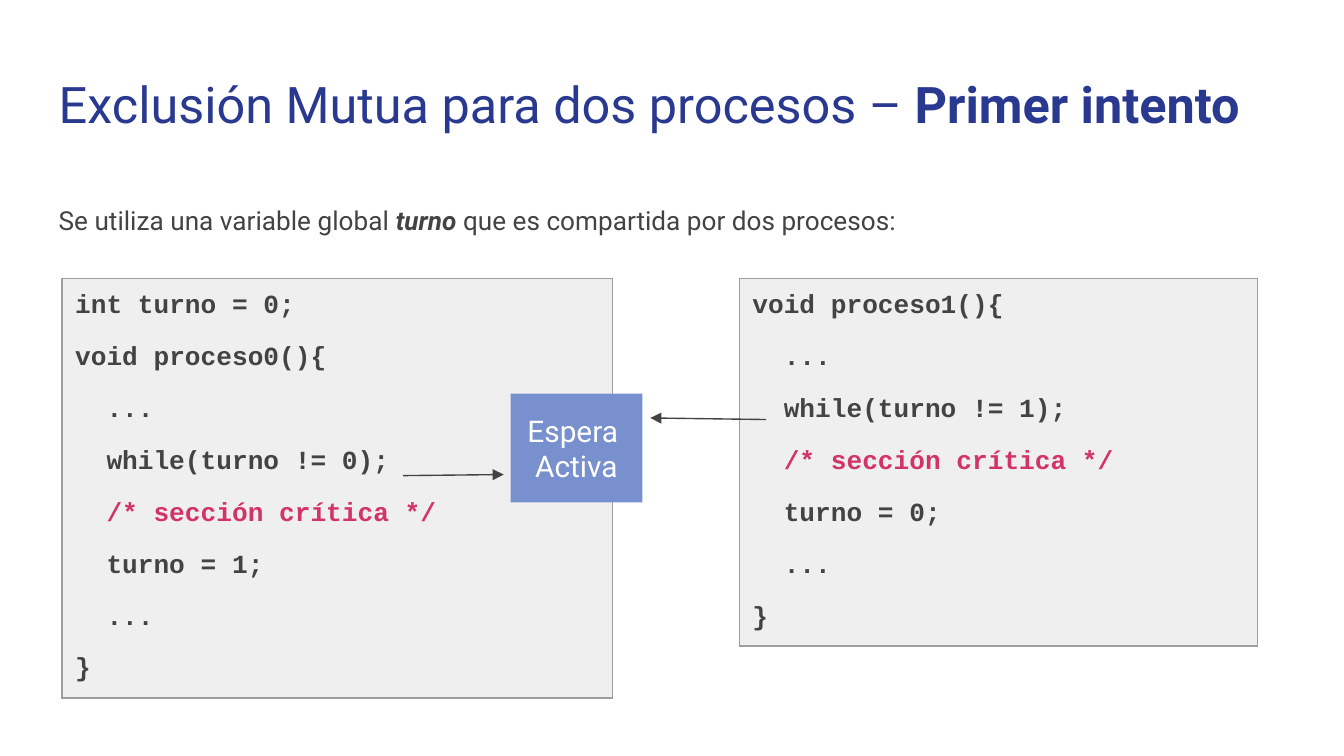
import dataclasses
import typing

import lxml.etree
import pptx
import pptx.dml.color
import pptx.enum.shapes
import pptx.enum.text
import pptx.oxml
import pptx.oxml.ns
import pptx.util

Cm = pptx.util.Cm
Pt = pptx.util.Pt
qn = pptx.oxml.ns.qn
Anchor = pptx.enum.text.MSO_ANCHOR
Align = pptx.enum.text.PP_ALIGN

COLORS = {
    "title": "2A3990",
    "text": "434343",
    "comment": "D23369",
    "code_fill": "EFEFEF",
    "code_border": "9E9E9E",
    "wait_fill": "7890CD",
    "wait_text": "FFFFFF",
}
MARGIN = Cm(0.25)
LINE_WIDTH = Pt(0.75)
CODE_TOP = 5.26
CODE_HEIGHT = 5.46
CODE_INDENT = Pt(16.8)

TITLE_FONT = {"name": "Roboto", "size": Pt(27), "bold": False}
BODY_FONT = {"name": "Roboto", "size": Pt(14)}
CODE_FONT = {"name": "Courier New", "size": Pt(14), "bold": True}
WAIT_FONT = {"name": "Roboto", "size": Pt(16)}


@dataclasses.dataclass
class CodeBlock:
    left: float
    width: float
    header: list[str]
    own_turn: int
    next_turn: int

    def lines(self) -> list[str]:
        return self.header + [
            "...",
            f"while(turno != {self.own_turn});",
            "/* sección crítica */",
            f"turno = {self.next_turn};",
            "...",
            "}",
        ]


@dataclasses.dataclass
class Arrow:
    start: tuple[float, float]
    end: tuple[float, float]


CODE_BLOCKS = [
    CodeBlock(1.17, 10.41, ["int turno = 0;", "void proceso0(){"], 0, 1),
    CodeBlock(13.97, 9.8, ["void proceso1(){"], 1, 0),
]
ARROWS = [
    Arrow((7.62, 8.99), (9.52, 8.97)),
    Arrow((14.48, 7.93), (12.29, 7.9)),
]


def rgb(color: str) -> pptx.dml.color.RGBColor:
    return pptx.dml.color.RGBColor.from_string(COLORS[color])


def set_all(target: typing.Any, values: dict[str, typing.Any]) -> None:
    for name, value in values.items():
        setattr(target, name, value)


def set_frame(frame: typing.Any, anchor: typing.Any) -> None:
    margins = {f"margin_{side}": MARGIN for side in ("left", "right", "top", "bottom")}
    set_all(frame, {
        **margins,
        "word_wrap": True,
        "auto_size": pptx.enum.text.MSO_AUTO_SIZE.NONE,
        "vertical_anchor": anchor,
    })


def add_run(paragraph: typing.Any, text: str, font: dict, color: str) -> None:
    run = paragraph.add_run()
    run.text = text
    set_all(run.font, font)
    run.font.color.rgb = rgb(color)


def add_title(slide: typing.Any) -> None:
    title = slide.shapes.title
    set_all(title, {"left": Cm(0.86), "top": Cm(1.14), "width": Cm(23.67), "height": Cm(1.68)})
    set_frame(title.text_frame, Anchor.TOP)
    paragraph = title.text_frame.paragraphs[0]
    paragraph.alignment = Align.LEFT
    add_run(paragraph, "Exclusión Mutua para dos procesos – ", TITLE_FONT, "title")
    add_run(paragraph, "Primer intento", {**TITLE_FONT, "bold": True}, "title")


def add_introduction(slide: typing.Any) -> None:
    introduction = slide.shapes.add_textbox(Cm(0.86), Cm(3.43), Cm(22.91), Cm(9.27))
    set_frame(introduction.text_frame, Anchor.TOP)
    paragraph = introduction.text_frame.paragraphs[0]
    paragraph.line_spacing = 1.3
    add_run(paragraph, "Se utiliza una variable global ", BODY_FONT, "text")
    add_run(paragraph, "turno ", {**BODY_FONT, "bold": True, "italic": True}, "text")
    add_run(paragraph, "que es compartida por dos procesos:", BODY_FONT, "text")


def add_borders(cell: typing.Any) -> None:
    properties = cell._tc.get_or_add_tcPr()
    for position, side in enumerate(("lnL", "lnR", "lnT", "lnB")):
        border = lxml.etree.Element(qn(f"a:{side}"), w=str(LINE_WIDTH))
        fill = lxml.etree.SubElement(border, qn("a:solidFill"))
        lxml.etree.SubElement(fill, qn("a:srgbClr"), val=COLORS["code_border"])
        properties.insert(position, border)


def add_code_block(slide: typing.Any, block: CodeBlock) -> None:
    table = slide.shapes.add_table(
        1, 1, Cm(block.left), Cm(CODE_TOP), Cm(block.width), Cm(CODE_HEIGHT)
    ).table
    set_all(table, {"first_row": False, "horz_banding": False})
    cell = table.cell(0, 0)
    cell.fill.solid()
    cell.fill.fore_color.rgb = rgb("code_fill")
    add_borders(cell)
    set_all(cell, {f"margin_{side}": MARGIN for side in ("left", "right", "top", "bottom")})
    cell.vertical_anchor = Anchor.MIDDLE

    lines = block.lines()
    for number, line in enumerate(lines):
        if number == 0:
            paragraph = cell.text_frame.paragraphs[0]
        else:
            paragraph = cell.text_frame.add_paragraph()
            paragraph.space_before = Pt(12)
        if len(block.header) <= number < len(lines) - 1:
            paragraph._p.get_or_add_pPr().set("marL", str(CODE_INDENT))
        add_run(paragraph, line, CODE_FONT, "comment" if line.startswith("/*") else "text")
    paragraph.space_after = Pt(12)


def add_arrow(slide: typing.Any, arrow: Arrow) -> None:
    connector = slide.shapes.add_connector(
        pptx.enum.shapes.MSO_CONNECTOR.STRAIGHT,
        *(Cm(value) for value in arrow.start + arrow.end),
    )
    connector.line.width = LINE_WIDTH
    connector.line.color.rgb = rgb("text")
    outline = connector.line._get_or_add_ln()
    lxml.etree.SubElement(outline, qn("a:tailEnd"), type="triangle")
    lxml.etree.SubElement(connector._element.spPr, qn("a:effectLst"))


def add_busy_wait(slide: typing.Any) -> None:
    busy_wait = slide.shapes.add_shape(
        pptx.enum.shapes.MSO_SHAPE.RECTANGLE, Cm(9.65), Cm(7.44), Cm(2.49), Cm(2.06)
    )
    busy_wait.shadow.inherit = False
    busy_wait.fill.solid()
    busy_wait.fill.fore_color.rgb = rgb("wait_fill")
    busy_wait.line.fill.background()
    frame = busy_wait.text_frame
    set_frame(frame, Anchor.MIDDLE)
    for paragraph, word in zip((frame.paragraphs[0], frame.add_paragraph()), ("Espera ", "Activa")):
        paragraph.alignment = Align.CENTER
        add_run(paragraph, word, WAIT_FONT, "wait_text")


def main() -> None:
    presentation = pptx.Presentation()
    set_all(presentation, {"slide_width": Cm(25.4), "slide_height": Cm(14.29)})
    slide = presentation.slides.add_slide(presentation.slide_layouts.get_by_name("Title Only"))
    add_title(slide)
    add_introduction(slide)
    for block in CODE_BLOCKS:
        add_code_block(slide, block)
    for arrow in ARROWS:
        add_arrow(slide, arrow)
    add_busy_wait(slide)
    presentation.save("out.pptx")


if __name__ == "__main__":
    main()
